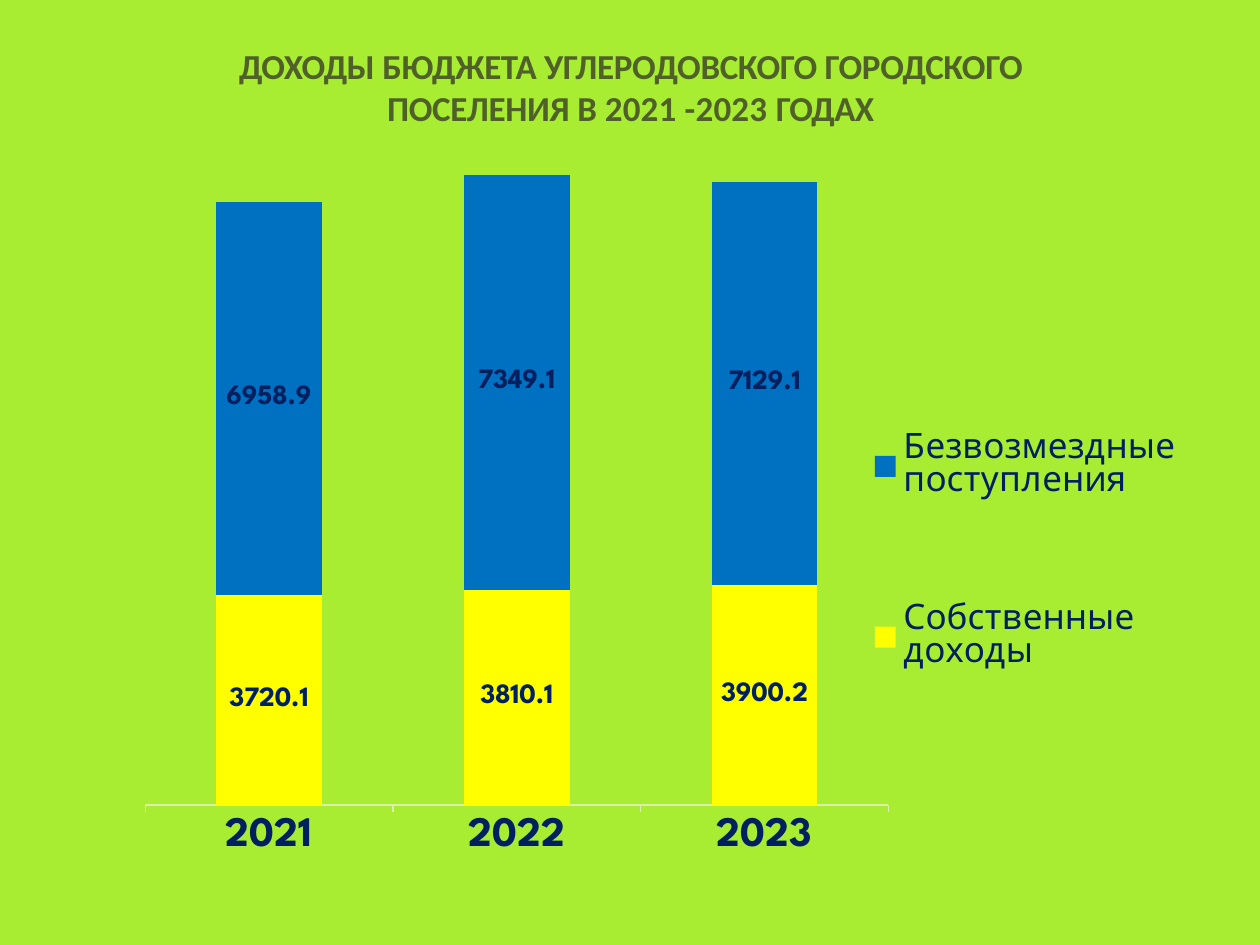
from lxml import etree
from pptx import Presentation
from pptx.chart.data import CategoryChartData
from pptx.dml.color import RGBColor
from pptx.enum.chart import XL_CHART_TYPE, XL_LABEL_POSITION, XL_LEGEND_POSITION, XL_TICK_MARK
from pptx.enum.shapes import MSO_SHAPE
from pptx.enum.text import MSO_ANCHOR, MSO_AUTO_SIZE, PP_ALIGN
from pptx.oxml.ns import qn
from pptx.util import Inches, Pt

STACKED = XL_CHART_TYPE.COLUMN_STACKED
LABEL_CENTER = XL_LABEL_POSITION.CENTER
LEGEND_RIGHT = XL_LEGEND_POSITION.RIGHT
TICK_OUTSIDE = XL_TICK_MARK.OUTSIDE
RECTANGLE = MSO_SHAPE.RECTANGLE
TOP = MSO_ANCHOR.TOP
NO_AUTOFIT = MSO_AUTO_SIZE.NONE
CENTER = PP_ALIGN.CENTER

LIME, OLIVE, NAVY, WHITE = "A8ED31", "4F6128", "002060", "FFFFFF"
CHART_FONT = "League Spartan"
TITLE_RUNS = [
    ("ДОХОДЫ ", -30),
    ("БЮДЖЕТА УГЛЕРОДОВСКОГО ГОРОДСКОГО ПОСЕЛЕНИЯ ", -20),
    ("В ", 0),
    ("2021 -2023 ", 10),
    ("ГОДАХ", -40),
]
YEARS = ["2021", "2022", "2023"]
INCOME = [
    ("Собственные доходы", [3720.1, 3810.1, 3900.2], "FFFF00"),
    ("Безвозмездные поступления", [6958.9, 7349.1, 7129.1], "0070C0"),
]


def rgb(value):
    """Turn a hex string into a colour."""
    return RGBColor.from_string(value)


def style_font(font, size, color, bold=False, name=CHART_FONT):
    """Set the size, colour, weight and face of a font."""
    font.size = Pt(size)
    font.color.rgb = rgb(color)
    font.bold = bold
    font.name = name


def add_backdrop(prs, slide):
    """Cover the slide with a plain rectangle behind everything else."""
    sp = slide.shapes.add_shape(RECTANGLE, 0, 0, prs.slide_width, prs.slide_height)
    sp.shadow.inherit = False
    sp.fill.solid()
    sp.fill.fore_color.rgb = rgb(LIME)
    sp.line.fill.background()
    slide.shapes._spTree.insert(2, sp._element)


def fill_title(slide):
    """Place the title and write its runs with their letter spacing."""
    title = slide.shapes.title
    title.left, title.top = Inches(1.37), Inches(0.33)
    title.width, title.height = Inches(7.27), Inches(0.69)
    tf = title.text_frame
    tf.word_wrap = True
    tf.auto_size = NO_AUTOFIT
    tf.vertical_anchor = TOP
    tf.margin_left = tf.margin_right = tf.margin_bottom = 0
    tf.margin_top = Inches(0.02)
    p = tf.paragraphs[0]
    p.alignment = CENTER
    p.line_spacing = 1.0
    p.space_before = Pt(0)
    for text, spacing in TITLE_RUNS:
        r = p.add_run()
        r.text = text
        style_font(r.font, 20, OLIVE, True, "Calibri")
        r.font._element.set("spc", str(spacing))


def set_layout(element, before, x, y, w, h, inner=False):
    """Give a chart part a manual layout, as fractions of the chart."""
    for old in element.findall(qn("c:layout")):
        element.remove(old)
    layout = etree.Element(qn("c:layout"))
    manual = etree.SubElement(layout, qn("c:manualLayout"))
    values = [("layoutTarget", "inner")] if inner else []
    values += [("xMode", "edge"), ("yMode", "edge"), ("x", x), ("y", y), ("w", w), ("h", h)]
    for tag, value in values:
        etree.SubElement(manual, qn(f"c:{tag}")).set("val", str(value))
    element.find(qn(before)).addprevious(layout)


def style_series(series, color):
    """Colour one series and show its values."""
    series.format.fill.solid()
    series.format.fill.fore_color.rgb = rgb(color)
    labels = series.data_labels
    labels.show_value = True
    labels.position = LABEL_CENTER
    labels.number_format = "0.0"
    labels.number_format_is_linked = False
    style_font(labels.font, 16, NAVY, True)


def style_axes(chart):
    """Show the years and hide the value scale."""
    years = chart.category_axis
    years.major_tick_mark = TICK_OUTSIDE
    years.format.line.color.rgb = rgb("D9F0A8")
    years.format.line.width = Pt(0.75)
    style_font(years.tick_labels.font, 24, NAVY, True)
    values = chart.value_axis
    values.minimum_scale, values.maximum_scale = 0, 11260
    values.has_major_gridlines = False
    values.visible = False


def add_income_chart(slide):
    """Add the stacked columns of income by year."""
    data = CategoryChartData(number_format="0.0")
    data.categories = YEARS
    for name, values, _ in INCOME:
        data.add_series(name, values)
    frame = slide.shapes.add_chart(
        STACKED, Inches(0.75), Inches(1.07), Inches(8.74), Inches(5.91), data)
    chart = frame.chart
    chart.has_title = False
    style_font(chart.font, 9.7, WHITE)
    plot = chart.plots[0]
    plot.gap_width, plot.overlap = 134, 100
    plot.vary_by_categories = False
    for series, (_, _, color) in zip(plot.series, INCOME):
        style_series(series, color)
    style_axes(chart)
    chart.has_legend = True
    legend = chart.legend
    legend.position = LEGEND_RIGHT
    legend.include_in_layout = False
    style_font(legend.font, 20, NAVY)
    area = chart._chartSpace.chart.plotArea
    set_layout(area, "c:barChart", 0.046, 0.046, 0.675, 0.854, inner=True)
    set_layout(legend._element, "c:overlay", 0.7, 0.26, 0.29, 0.6)


def main():
    """Build the slide and save it."""
    prs = Presentation()
    prs.slide_width, prs.slide_height = Inches(10), Inches(7.5)
    slide = prs.slides.add_slide(prs.slide_layouts[5])
    add_backdrop(prs, slide)
    fill_title(slide)
    add_income_chart(slide)
    prs.save("out.pptx")


if __name__ == "__main__":
    main()
